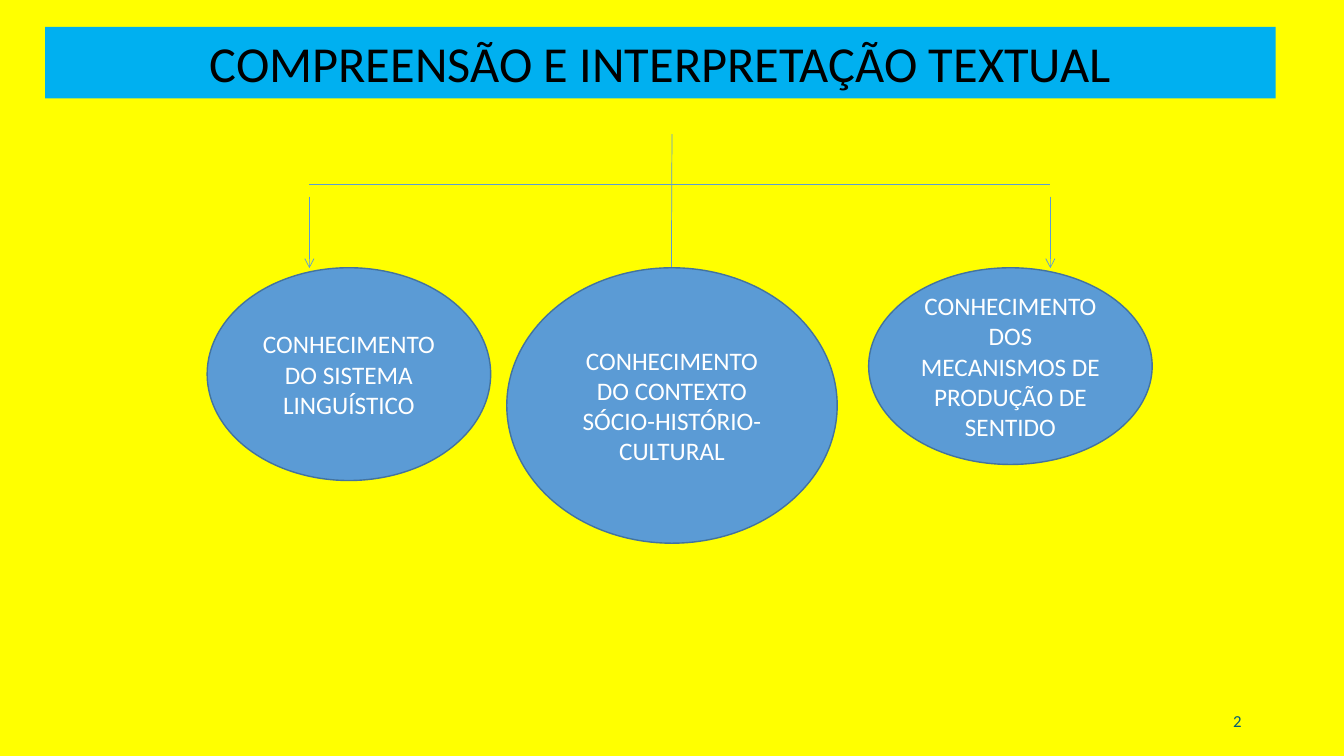
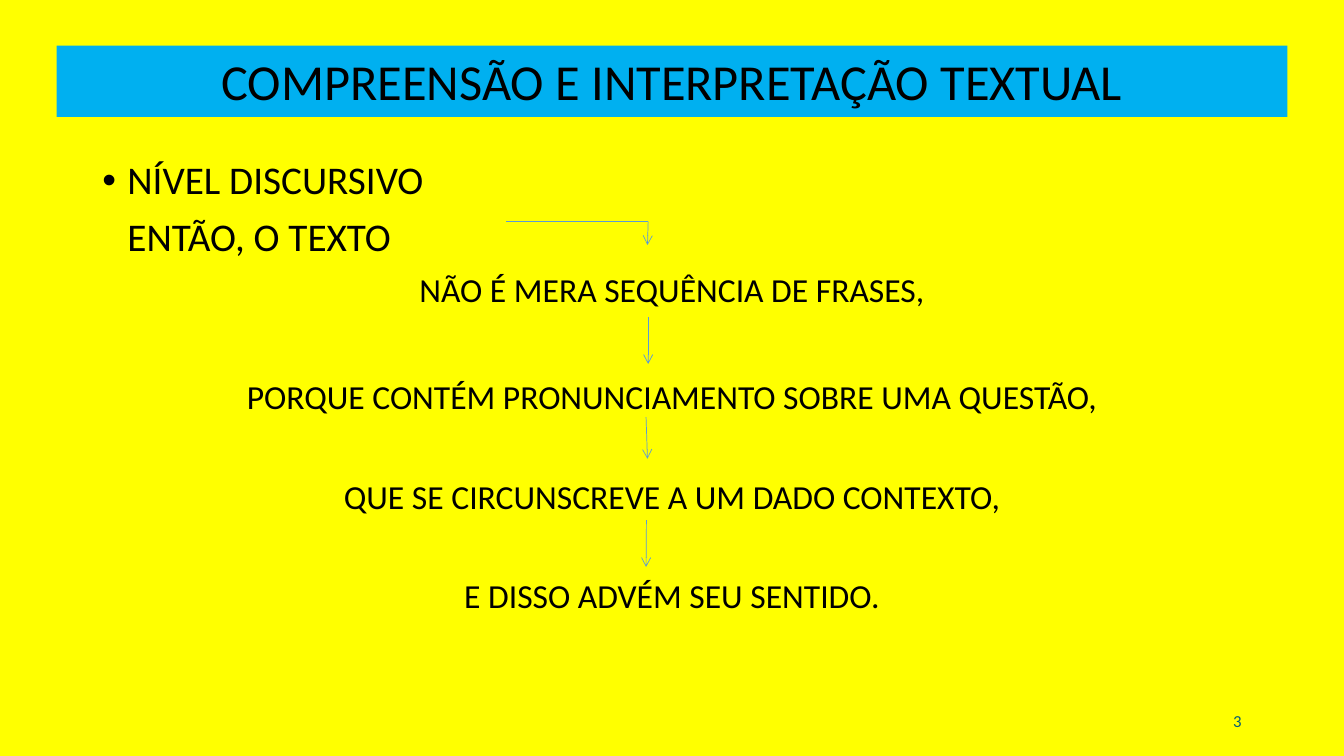
from lxml import etree
from pptx import Presentation
from pptx.dml.color import RGBColor
from pptx.enum.shapes import MSO_CONNECTOR, MSO_SHAPE
from pptx.enum.text import MSO_ANCHOR, MSO_AUTO_SIZE, PP_ALIGN
from pptx.oxml.ns import qn
from pptx.util import Pt

LINE = MSO_CONNECTOR.STRAIGHT
OVAL = MSO_SHAPE.FLOWCHART_CONNECTOR
MIDDLE, TOP = MSO_ANCHOR.MIDDLE, MSO_ANCHOR.TOP
FIXED = MSO_AUTO_SIZE.NONE
LEFT, CENTER, RIGHT = PP_ALIGN.LEFT, PP_ALIGN.CENTER, PP_ALIGN.RIGHT
FONT = "Calibri"
TITLE = "COMPREENSÃO E INTERPRETAÇÃO TEXTUAL"
HEX = {
    "back": "FFFF00",
    "band": "00B0F0",
    "oval": "5B9BD5",
    "edge": "43739E",
    "text": "000000",
    "light": "FFFFFF",
    "page": "045C75",
}
RGB = {name: RGBColor.from_string(code) for name, code in HEX.items()}


def write(par, text, size, color, align):
    par.text = text
    par.alignment = align
    par.font.name = FONT
    par.font.size = Pt(size)
    par.font.color.rgb = RGB[color]


def draw(slide, x1, y1, x2, y2, arrow):
    line = slide.shapes.add_connector(LINE, Pt(x1), Pt(y1), Pt(x2), Pt(y2))
    line.line.color.rgb = RGB["oval"]
    line.line.width = Pt(0.5)
    if arrow:
        etree.SubElement(line.line._get_or_add_ln(), qn("a:tailEnd"), type="arrow")
    etree.SubElement(line._element.spPr, qn("a:effectLst"))


deck = Presentation()
deck.slide_width, deck.slide_height = Pt(960), Pt(540)
fill = deck.slide_master.background.fill
fill.solid()
fill.fore_color.rgb = RGB["back"]

slides = []
for page, left, top in [("2", 32.25, 19.25), ("3", 40.5, 32.5)]:
    slide = deck.slides.add_slide(deck.slide_layouts[5])
    slides.append(slide)

    band = slide.shapes.title
    band.left, band.top, band.width, band.height = Pt(left), Pt(top), Pt(879), Pt(51)
    band.fill.solid()
    band.fill.fore_color.rgb = RGB["band"]
    band.text_frame.auto_size = FIXED
    band.text_frame.vertical_anchor = TOP
    write(band.text_frame.paragraphs[0], TITLE, 36, "text", CENTER)

    foot = slide.shapes.add_textbox(Pt(678), Pt(500.5), Pt(216), Pt(28.75))
    foot.text_frame.word_wrap = True
    foot.text_frame.vertical_anchor = MIDDLE
    write(foot.text_frame.paragraphs[0], page, 12, "page", RIGHT)

tree, flow = slides

for x1, y1, x2, y2, arrow in [
    (221, 131.75, 750.25, 131.75, False),
    (480, 95.75, 479.5, 214, False),
    (221, 140.5, 221, 191.5, True),
    (750.25, 140.5, 750.25, 191.5, True),
]:
    draw(tree, x1, y1, x2, y2, arrow)

for text, left, width, height in [
    ("CONHECIMENTO DO SISTEMA LINGUÍSTICO", 148, 202.5, 152),
    ("CONHECIMENTO\vDO CONTEXTO\vSÓCIO-HISTÓRIO-CULTURAL", 362, 236, 196.75),
    ("CONHECIMENTO DOS MECANISMOS DE PRODUÇÃO DE SENTIDO", 620.5, 202.5, 140.5),
]:
    oval = tree.shapes.add_shape(OVAL, Pt(left), Pt(191.25), Pt(width), Pt(height))
    oval.shadow.inherit = False
    oval.fill.solid()
    oval.fill.fore_color.rgb = RGB["oval"]
    oval.line.color.rgb = RGB["edge"]
    oval.line.width = Pt(1)
    oval.text_frame.word_wrap = True
    oval.text_frame.vertical_anchor = MIDDLE
    write(oval.text_frame.paragraphs[0], text, 18, "light", CENTER)

body = flow.shapes.add_textbox(Pt(66), Pt(111.5), Pt(828), Pt(294))
frame = body.text_frame
frame.word_wrap = True
for row, (text, size, align, gap, inset) in enumerate([
    ("NÍVEL DISCURSIVO", 28, LEFT, 0, 18),
    ("ENTÃO, O TEXTO", 28, LEFT, 10, 18),
    ("NÃO É MERA SEQUÊNCIA DE FRASES,", 24, CENTER, 10, 0),
    ("PORQUE CONTÉM PRONUNCIAMENTO SOBRE UMA QUESTÃO,", 24, CENTER, 50, 0),
    ("QUE SE CIRCUNSCREVE A UM DADO CONTEXTO,", 24, CENTER, 45.5, 0),
    ("E DISSO ADVÉM SEU SENTIDO.", 24, CENTER, 45.5, 0),
]):
    par = frame.add_paragraph() if row else frame.paragraphs[0]
    par.line_spacing = 0.9
    par.space_before = Pt(gap)
    props = par._p.get_or_add_pPr()
    props.set("marL", str(Pt(inset)))
    if row == 0:
        props.set("indent", str(Pt(-inset)))
        etree.SubElement(props, qn("a:buFont"), typeface="Arial")
        etree.SubElement(props, qn("a:buChar"), char="•")
    write(par, text, size, "text", align)

for x1, y1, x2, y2, arrow in [
    (463, 226.75, 463, 260, True),
    (461.5, 298, 462.5, 327.75, True),
    (461.75, 371.5, 461.5, 405, True),
    (361.5, 158.25, 463, 158.25, False),
    (463, 158.25, 462.5, 175, True),
]:
    draw(flow, x1, y1, x2, y2, arrow)

deck.save("out.pptx")
